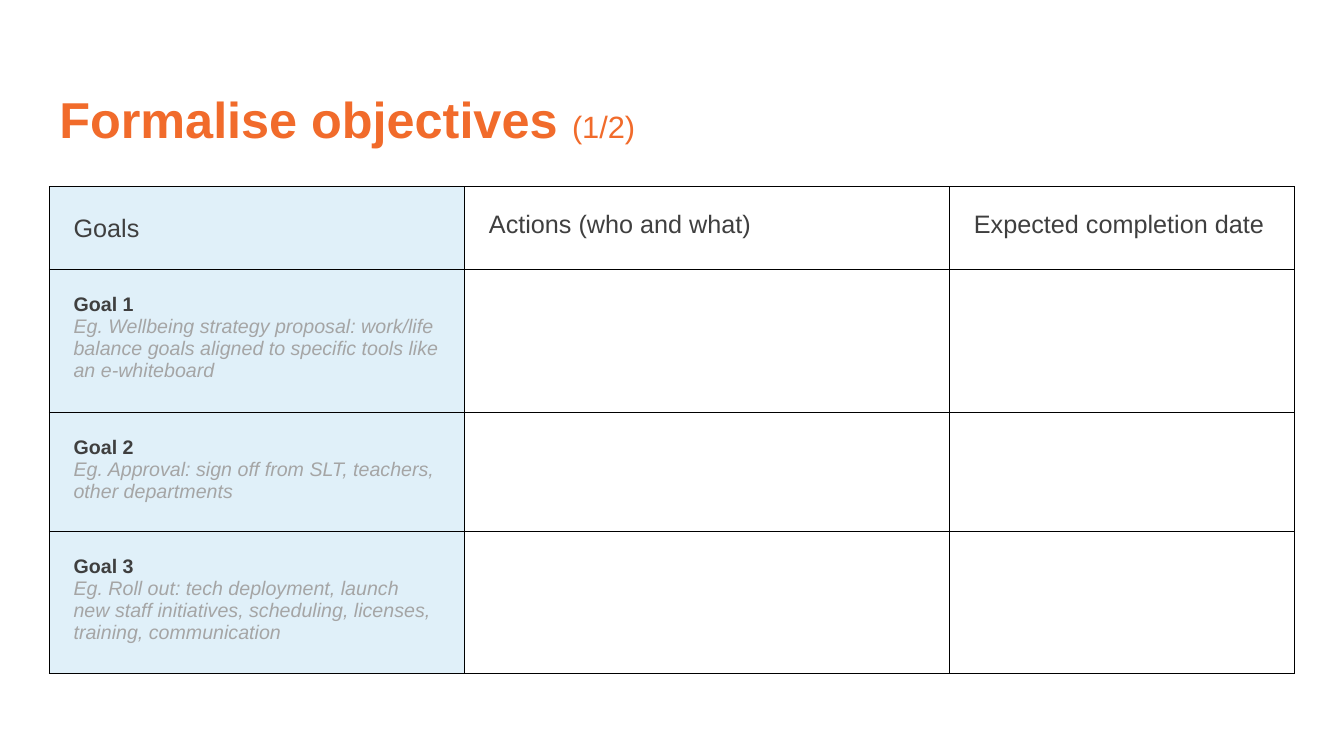
from lxml import etree
from pptx import Presentation
from pptx.dml.color import RGBColor
from pptx.enum.text import MSO_ANCHOR
from pptx.oxml.ns import qn
from pptx.util import Inches, Pt

MIDDLE = MSO_ANCHOR.MIDDLE
FONT = "Arial"
ORANGE, DARK, GREY = "F16B2B", "3F3F3F", "A5A5A5"
PALE_BLUE, WHITE, BLACK = "E0F0F9", "FFFFFF", "000000"

COLUMN_WIDTHS = [4.12, 4.81, 3.42]
ROW_HEIGHTS = [0.79, 1.35, 1.12, 1.35]
HEADERS = ["Goals", "Actions (who and what)", "Expected completion date"]
GOALS = [
    "Eg. Wellbeing strategy proposal: work/life balance goals aligned to "
    "specific tools like an e-whiteboard",
    "Eg. Approval: sign off from SLT, teachers, other departments",
    "Eg. Roll out: tech deployment, launch new staff initiatives, "
    "scheduling, licenses, training, communication",
]


def rgb(color):
    return RGBColor.from_string(color)


def add_text(p, text, size, color=DARK, bold=False, italic=False):
    r = p.add_run()
    r.text = text
    r.font.name = FONT
    r.font.size = Pt(size)
    r.font.color.rgb = rgb(color)
    r.font.bold = bold
    r.font.italic = italic


def add_title(s):
    box = s.shapes.add_textbox(Inches(0.49), Inches(0.49), Inches(11.5), Inches(1.45))
    tf = box.text_frame
    tf.word_wrap = True
    tf.vertical_anchor = MIDDLE
    p = tf.paragraphs[0]
    p.line_spacing = 0.9
    add_text(p, "Formalise objectives ", 36, ORANGE, bold=True)
    add_text(p, "(1/2)", 22, ORANGE)


def set_borders(cell, color, width):
    tc_pr = cell._tc.get_or_add_tcPr()
    for side in ("a:lnL", "a:lnR", "a:lnT", "a:lnB"):
        line = etree.SubElement(tc_pr, qn(side), w=str(Pt(width)))
        fill = etree.SubElement(line, qn("a:solidFill"))
        etree.SubElement(fill, qn("a:srgbClr"), val=color)


def set_margins(cell, margin):
    cell.margin_left = cell.margin_right = Inches(margin)
    cell.margin_top = cell.margin_bottom = Inches(margin)


def add_goals_table(s):
    frame = s.shapes.add_table(
        len(ROW_HEIGHTS), len(COLUMN_WIDTHS), Inches(0.49), Inches(1.85),
        Inches(sum(COLUMN_WIDTHS)), Inches(sum(ROW_HEIGHTS)))
    table = frame.table
    table.first_row = False
    table.horz_banding = False
    for column, width in zip(table.columns, COLUMN_WIDTHS):
        column.width = Inches(width)
    for row, height in zip(table.rows, ROW_HEIGHTS):
        row.height = Inches(height)
        for i, cell in enumerate(row.cells):
            set_borders(cell, BLACK, 0.75)
            cell.fill.solid()
            cell.fill.fore_color.rgb = rgb(WHITE if i else PALE_BLUE)
    for i, header in enumerate(HEADERS):
        cell = table.cell(0, i)
        set_margins(cell, 0.24)
        add_text(cell.text_frame.paragraphs[0], header, 18)
    table.cell(0, 0).text_frame.paragraphs[0].line_spacing = 1.15
    for i, example in enumerate(GOALS, 1):
        cell = table.cell(i, 0)
        set_margins(cell, 0.24)
        tf = cell.text_frame
        add_text(tf.paragraphs[0], f"Goal {i}", 14, bold=True)
        add_text(tf.add_paragraph(), example, 14, GREY, italic=True)


def main():
    prs = Presentation()
    prs.slide_width = Inches(13.33)
    prs.slide_height = Inches(7.5)
    s = prs.slides.add_slide(prs.slide_layouts[6])
    add_title(s)
    add_goals_table(s)
    prs.save("out.pptx")


if __name__ == "__main__":
    main()
